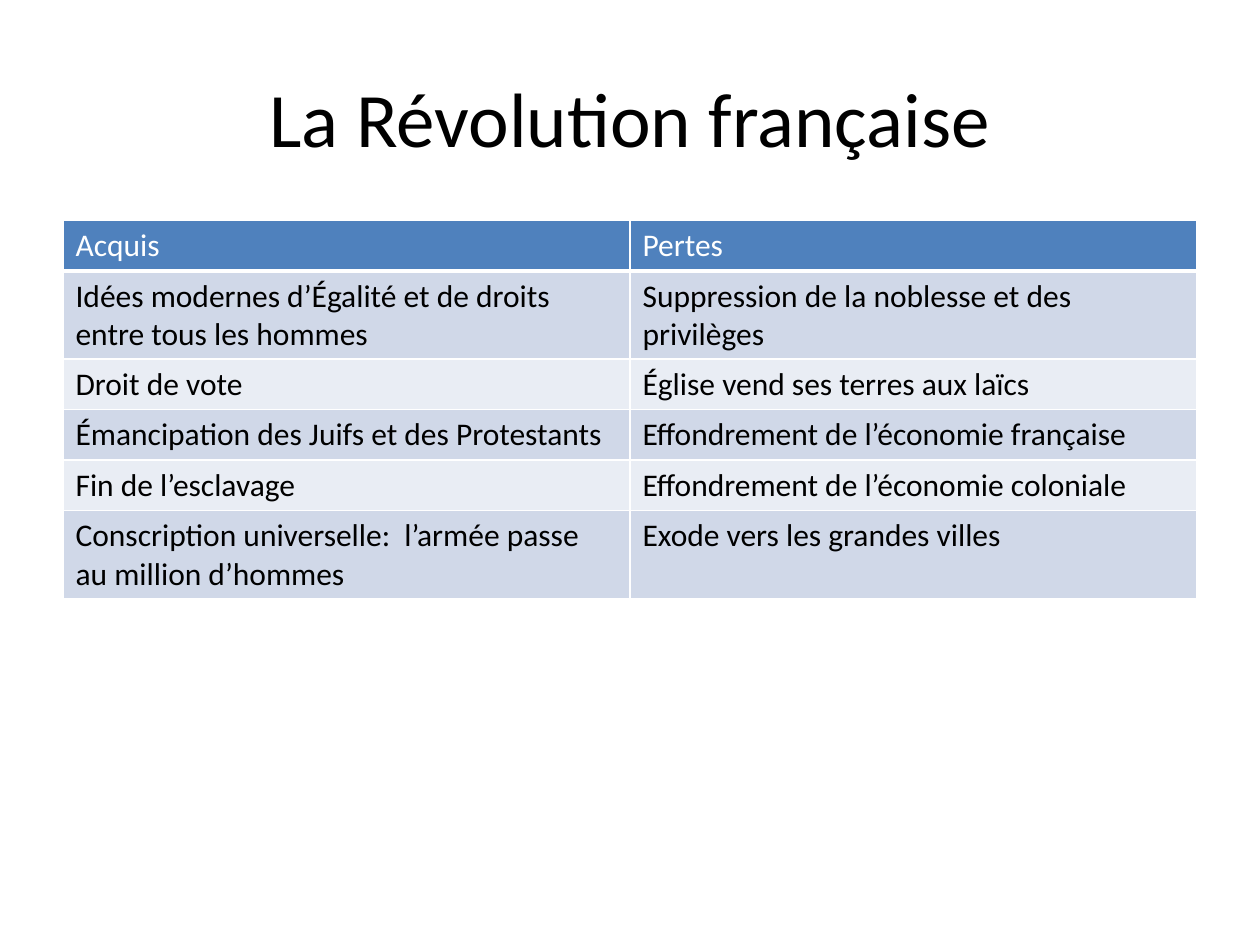
from dataclasses import dataclass

from lxml import etree
from pptx import Presentation
from pptx.dml.color import RGBColor
from pptx.enum.text import MSO_ANCHOR, PP_ALIGN
from pptx.oxml.ns import qn
from pptx.util import Inches, Pt

CENTER, LEFT = PP_ALIGN.CENTER, PP_ALIGN.LEFT
MIDDLE = MSO_ANCHOR.MIDDLE
BLANK = 6

ROWS = [
    ("Acquis", "Pertes"),
    ("Idées modernes d’Égalité et de droits entre tous les hommes",
     "Suppression de la noblesse et des privilèges"),
    ("Droit de vote", "Église vend ses terres aux laïcs"),
    ("Émancipation des Juifs et des Protestants", "Effondrement de l’économie française"),
    ("Fin de l’esclavage", "Effondrement de l’économie coloniale"),
    ("Conscription universelle:  l’armée passe au million d’hommes",
     "Exode vers les grandes villes"),
]


@dataclass(frozen=True)
class Theme:
    """Colours, font and sizes of the slide."""
    font: str = "Calibri"
    title_size: int = 44
    body_size: int = 18
    text: str = "000000"
    header_text: str = "FFFFFF"
    header: str = "4F81BD"
    bands: tuple = ("D0D8E8", "E9EDF4")
    border: str = "FFFFFF"
    border_width: int = 1
    header_rule: int = 3


class Deck:
    """Draws styled elements, placed by shares of the slide's size."""

    def __init__(self, prs, theme):
        self.prs, self.theme = prs, theme
        self.s = prs.slides.add_slide(prs.slide_layouts[BLANK])

    def box(self, x, y, w, h):
        width, height = self.prs.slide_width, self.prs.slide_height
        return int(x * width), int(y * height), int(w * width), int(h * height)

    def add_text(self, tf, text, size, color, align=LEFT):
        p = tf.paragraphs[0]
        p.alignment = align
        r = p.add_run()
        r.text = text
        r.font.name, r.font.size, r.font.bold = self.theme.font, Pt(size), False
        r.font.color.rgb = RGBColor.from_string(color)

    def title(self, text, *share):
        tf = self.s.shapes.add_textbox(*self.box(*share)).text_frame
        tf.word_wrap, tf.vertical_anchor = True, MIDDLE
        self.add_text(tf, text, self.theme.title_size, self.theme.text, CENTER)

    def borders(self, cell, widths):
        tc_pr = cell._tc.get_or_add_tcPr()
        for side, width in widths.items():
            ln = etree.SubElement(tc_pr, qn(f"a:ln{side}"), w=str(Pt(width)))
            fill = etree.SubElement(ln, qn("a:solidFill"))
            etree.SubElement(fill, qn("a:srgbClr"), val=self.theme.border)

    def table(self, rows, *share):
        t = self.theme
        shape = self.s.shapes.add_table(len(rows), len(rows[0]), *self.box(*share))
        for i, row in enumerate(rows):
            header = i == 0
            fill = t.header if header else t.bands[(i - 1) % len(t.bands)]
            color = t.header_text if header else t.text
            widths = dict.fromkeys("LRTB", t.border_width)
            if header:
                widths["B"] = t.header_rule
            elif i == 1:
                widths["T"] = t.header_rule
            for j, text in enumerate(row):
                cell = shape.table.cell(i, j)
                self.borders(cell, widths)
                cell.fill.solid()
                cell.fill.fore_color.rgb = RGBColor.from_string(fill)
                self.add_text(cell.text_frame, text, t.body_size, color)


def main():
    prs = Presentation()
    prs.slide_width, prs.slide_height = Inches(10), Inches(7.5)
    deck = Deck(prs, Theme())
    deck.title("La Révolution française", 1 / 20, 1 / 25, 9 / 10, 1 / 6)
    deck.table(ROWS, 1 / 20, 7 / 30, 9 / 10, 0.32)
    prs.save("out.pptx")


if __name__ == "__main__":
    main()
